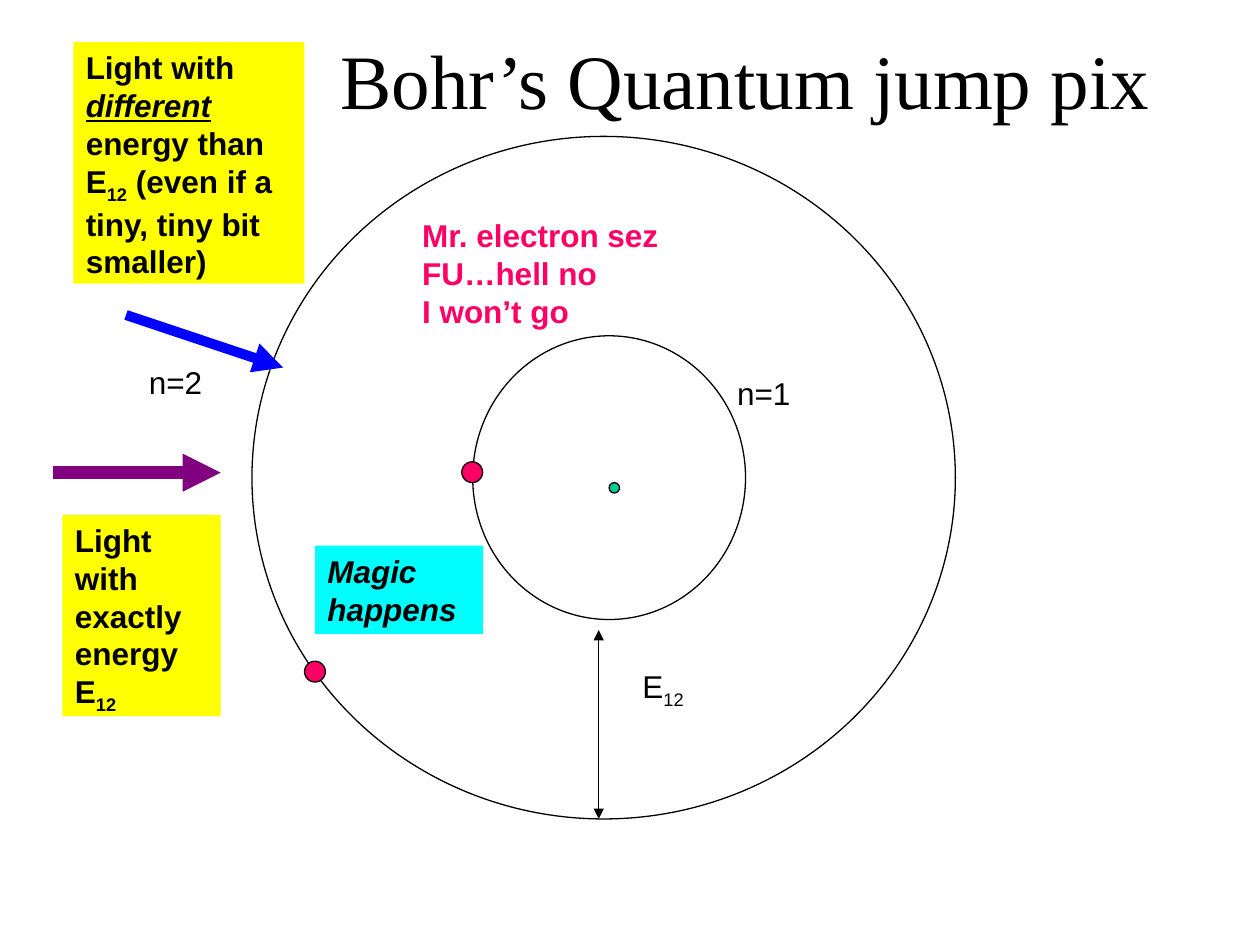
import pptx
import pptx.dml.color
import pptx.enum.shapes
import pptx.enum.text
import pptx.oxml
import pptx.oxml.ns
import pptx.util
from pptx.util import Cm

COLOURS = {
    "text": "000000",
    "nucleus": "00CC99",
    "electron": "FF0066",
    "note": "FFFF00",
    "magic": "00FFFF",
    "right_light": "800080",
    "wrong_light": "0000FF",
}
SUBSCRIPT = {"subscript": True}
SHAPES = pptx.enum.shapes.MSO_SHAPE


def colour(name):
    return pptx.dml.color.RGBColor.from_string(COLOURS[name])


def add_span(para, text, ink="text", size=18, face="Arial",
             bold=False, italic=False, underline=False, subscript=False):
    span = para.add_run()
    span.text = text
    font = span.font
    font.name, font.size = face, pptx.util.Pt(size)
    font.bold, font.italic, font.underline = bold, italic, underline
    font.color.rgb = colour(ink)
    if subscript:
        span._r.get_or_add_rPr().set("baseline", "-25000")


def add_text(page, box, paras, fill=None, **style):
    """Place paragraphs, each a list of (text, extra style), on an optional fill."""
    lengths = [Cm(length) for length in box]
    if fill:
        holder = page.shapes.add_shape(SHAPES.RECTANGLE, *lengths)
        holder.shadow.inherit = False
        holder.fill.solid()
        holder.fill.fore_color.rgb = colour(fill)
        holder.line.fill.background()
    else:
        holder = page.shapes.add_textbox(*lengths)
    frame = holder.text_frame
    frame.word_wrap = True
    frame.auto_size = pptx.enum.text.MSO_AUTO_SIZE.SHAPE_TO_FIT_TEXT
    frame.vertical_anchor = pptx.enum.text.MSO_ANCHOR.TOP
    for index, spans in enumerate(paras):
        para = frame.add_paragraph() if index else frame.paragraphs[0]
        para.alignment = pptx.enum.text.PP_ALIGN.LEFT
        for text, extra in spans:
            add_span(para, text, **{**style, **extra})


def add_circle(page, left, top, width, height, fill=None):
    circle = page.shapes.add_shape(
        SHAPES.OVAL, Cm(left), Cm(top), Cm(width), Cm(height))
    circle.shadow.inherit = False
    circle.line.color.rgb = colour("text")
    circle.line.width = pptx.util.Pt(0.75)
    if fill:
        circle.fill.solid()
        circle.fill.fore_color.rgb = colour(fill)
    else:
        circle.fill.background()


def add_arrow(page, start, end, ink, weight, ends=("tailEnd",)):
    arrow = page.shapes.add_connector(
        pptx.enum.shapes.MSO_CONNECTOR.STRAIGHT,
        *[Cm(length) for length in (*start, *end)])
    arrow.line.color.rgb = colour(ink)
    arrow.line.width = pptx.util.Pt(weight)
    line = arrow.line._ln
    for name in ends:
        head = pptx.oxml.parse_xml(
            f'<a:{name} {pptx.oxml.ns.nsdecls("a")} type="triangle"/>')
        line.append(head)
    line.addnext(pptx.oxml.parse_xml(
        f'<a:effectLst {pptx.oxml.ns.nsdecls("a")}/>'))


def place_title(page, left, top, width, height):
    title = page.shapes.title
    title.left, title.top = Cm(left), Cm(top)
    title.width, title.height = Cm(width), Cm(height)
    frame = title.text_frame
    frame.auto_size = pptx.enum.text.MSO_AUTO_SIZE.NONE
    frame.vertical_anchor = pptx.enum.text.MSO_ANCHOR.MIDDLE
    para = frame.paragraphs[0]
    para.alignment = pptx.enum.text.PP_ALIGN.CENTER
    add_span(para, "Bohr’s Quantum jump pix", size=44, face="Times New Roman")


def draw_atom(page, left, top, width, height):
    """Draw both orbits, the nucleus, the electrons and the energy gap."""
    electron = 0.42
    add_circle(page, left + 4.45, top + 4.02, 5.5, 5.72)
    add_circle(page, left + 7.2, top + 6.98, 0.21, 0.21, "nucleus")
    add_circle(page, left + 4.23, top + 6.56, electron, electron, "electron")
    add_circle(page, left, top, width, height)
    add_circle(page, left + 1.06, top + 10.58, electron, electron, "electron")
    add_text(page, (left + 9.53, top + 4.66, 2.75, 1.02), [[("n=1", {})]])
    add_text(page, (left - 2.33, top + 4.45, 3.18, 1.02), [[("n=2", {})]])
    gap = left + 6.99
    add_arrow(page, (gap, top + 9.95), (gap, top + height), "text", 0.75,
              ("headEnd", "tailEnd"))
    add_text(page, (left + 7.62, top + 10.58, 2.33, 1.02),
             [[("E", {}), ("12", SUBSCRIPT)]])
    add_text(page, (left + 3.18, top + 1.48, 5.72, 2.54),
             [[("Mr. electron sez FU…hell no", {})], [("I won’t go", {})]],
             ink="electron", bold=True)
    add_text(page, (left + 1.27, top + 8.25, 3.39, 1.78),
             [[("Magic happens", {})]], "magic", bold=True, italic=True)


def draw_right_light(page, left, top, width, height):
    """Arrow above a note: light whose energy fits the gap."""
    add_arrow(page, (left, top), (left + width, top), "right_light", 7.25)
    add_text(page, (left + 0.2, top + 0.85, width - 0.2, height - 0.85),
             [[("Light with exactly energy E", {}), ("12", SUBSCRIPT)]],
             "note", bold=True)


def draw_wrong_light(page, left, top, width, height):
    """Note above an arrow: light whose energy misses the gap."""
    add_arrow(page, (left + 1.06, top + 5.5), (left + 4.23, top + height),
              "wrong_light", 5.75)
    add_text(page, (left, top, width, 4.87),
             [[("Light with ", {}),
               ("different ", {"italic": True, "underline": True}),
               ("energy than E", {}), ("12", SUBSCRIPT),
               (" (even if a tiny, tiny bit smaller)", {})]],
             "note", bold=True)


def main():
    deck = pptx.Presentation()
    deck.slide_width, deck.slide_height = Cm(25.4), Cm(19.05)
    page = deck.slides.add_slide(deck.slide_layouts.get_by_name("Title Only"))
    place_title(page, 4.23, 0, 21.59, 3.18)
    draw_atom(page, 5.08, 2.75, 14.18, 13.76)
    draw_right_light(page, 1.06, 9.53, 3.39, 4.91)
    draw_wrong_light(page, 1.48, 0.85, 4.66, 6.56)
    deck.save("out.pptx")


if __name__ == "__main__":
    main()
